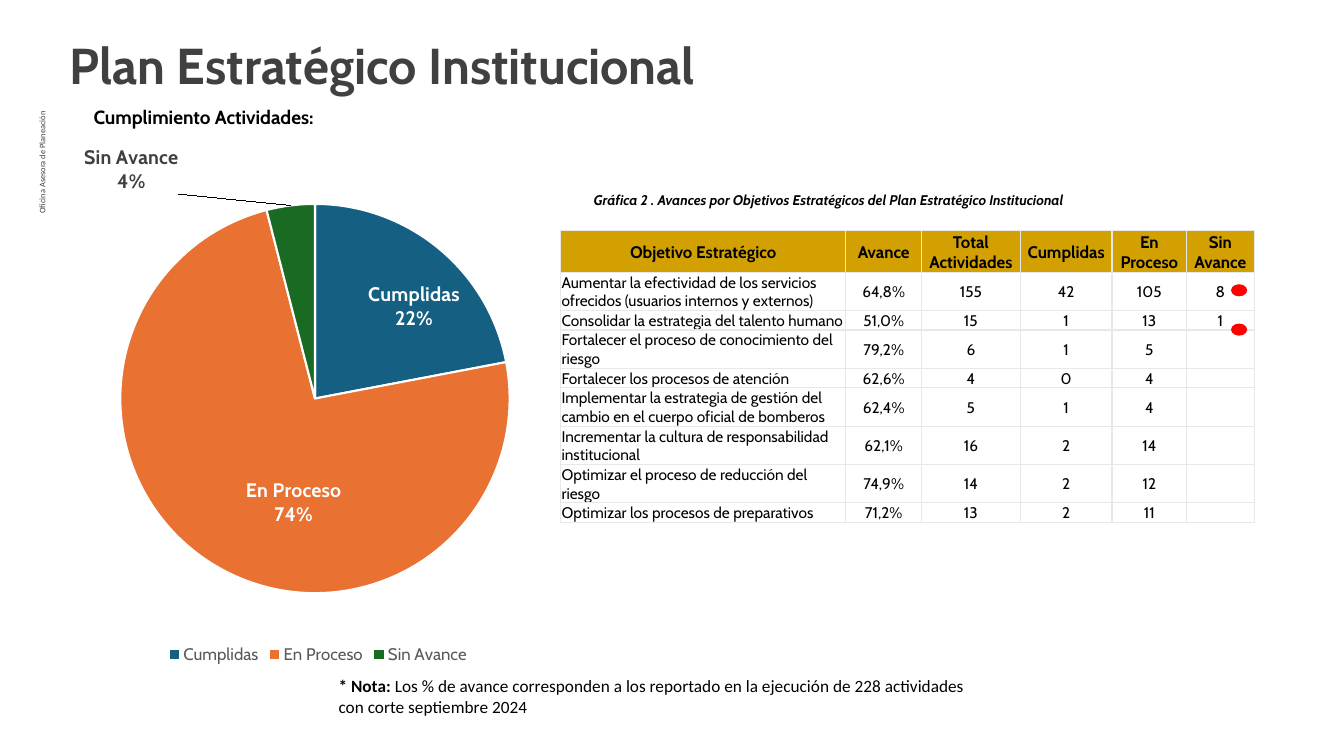
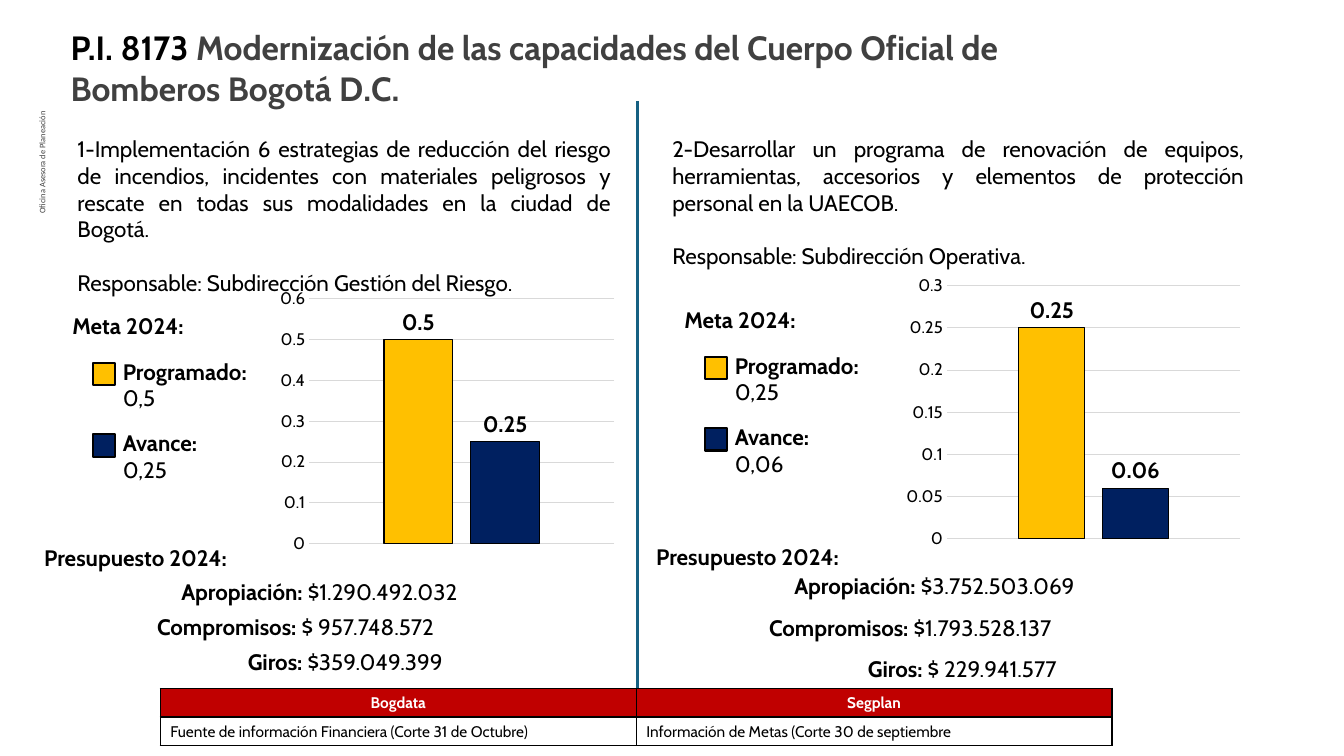
from dataclasses import dataclass

from lxml.etree import SubElement
from pptx import Presentation
from pptx.chart.data import CategoryChartData
from pptx.dml.color import RGBColor
from pptx.enum.chart import XL_CHART_TYPE as ChartType, XL_LABEL_POSITION as LabelPos
from pptx.enum.chart import XL_LEGEND_POSITION as LegendPos, XL_TICK_MARK as TickMark
from pptx.enum.shapes import MSO_CONNECTOR, MSO_SHAPE
from pptx.enum.text import MSO_ANCHOR as Anchor, MSO_AUTO_SIZE, PP_ALIGN as Align
from pptx.oxml import parse_xml
from pptx.oxml.ns import nsdecls, qn
from pptx.util import Inches, Pt

# Shared colours and fonts
BLACK = RGBColor(0x00, 0x00, 0x00)
WHITE = RGBColor(0xFF, 0xFF, 0xFF)
DARK = RGBColor(0x40, 0x40, 0x40)
GRAY = RGBColor(0x59, 0x59, 0x59)
GRID = RGBColor(0xD9, 0xD9, 0xD9)
PALE = RGBColor(0xE8, 0xE8, 0xE8)
BLUE = RGBColor(0x15, 0x60, 0x82)
ORANGE = RGBColor(0xE9, 0x71, 0x32)
GREEN = RGBColor(0x19, 0x6B, 0x24)
GOLD = RGBColor(0xD2, 0xA0, 0x00)
YELLOW = RGBColor(0xFF, 0xC0, 0x00)
NAVY = RGBColor(0x00, 0x20, 0x60)
CRIMSON = RGBColor(0xC0, 0x00, 0x00)
RED = RGBColor(0xFF, 0x00, 0x00)
MAIN_FONT, NOTE_FONT = "Cabin", "Calibri"

OBJECTIVES = [
    ("Objetivo Estratégico", "Avance", "Total\nActividades", "Cumplidas", "En Proceso", "Sin Avance"),
    ("Aumentar la efectividad de los servicios ofrecidos (usuarios internos y externos)",
     "64,8%", "155", "42", "105", "8"),
    ("Consolidar la estrategia del talento humano", "51,0%", "15", "1", "13", "1"),
    ("Fortalecer el proceso de conocimiento del riesgo", "79,2%", "6", "1", "5", ""),
    ("Fortalecer los procesos de atención", "62,6%", "4", "0", "4", ""),
    ("Implementar la estrategia de gestión del cambio en el cuerpo oficial de bomberos",
     "62,4%", "5", "1", "4", ""),
    ("Incrementar la cultura de responsabilidad institucional", "62,1%", "16", "2", "14", ""),
    ("Optimizar el proceso de reducción del riesgo", "74,9%", "14", "2", "12", ""),
    ("Optimizar los procesos de preparativos", "71,2%", "13", "2", "11", ""),
]
SOURCES = [
    ("Bogdata", "Segplan"),
    ("Fuente de información Financiera (Corte 31 de Octubre)",
     "Información de Metas (Corte 30 de septiembre"),
]


@dataclass
class Goal:
    left: float            # shift of the whole column
    top: float             # top of the "Meta 2024" block
    description_at: tuple
    description: str
    responsible: str
    planned: float
    achieved: float
    chart_at: tuple
    axis_max: float
    axis_step: float
    budget_top: float
    budget: list           # label, amount, left, top


GOALS = [
    Goal(0, 3.05, (0.67, 1.29, 5.49, 1.64),
         "1-Implementación 6 estrategias de reducción del riesgo de incendios, incidentes con "
         "materiales peligrosos y rescate en todas sus modalidades en la ciudad de Bogotá.",
         "Responsable: Subdirección Gestión del Riesgo.", 0.5, 0.25,
         (2.71, 2.81, 3.45, 2.74), 0.6, 0.1, 5.35,
         [("Apropiación:", "$1.290.492.032", 1.7, 5.69),
          ("Compromisos:", "$ 957.748.572", 1.46, 6.03),
          ("Giros:", "$359.049.399", 2.36, 6.38)]),
    Goal(6.07, 2.99, (6.57, 1.29, 5.87, 1.37),
         "2-Desarrollar un programa de renovación de equipos, herramientas, accesorios y "
         "elementos de protección personal en la UAECOB.",
         "Responsable: Subdirección Operativa.", 0.25, 0.06,
         (8.92, 2.68, 3.45, 2.82), 0.3, 0.05, 5.34,
         [("Apropiación:", "$3.752.503.069", 7.78, 5.63),
          ("Compromisos:", "$1.793.528.137", 7.53, 6.04),
          ("Giros:", "$ 229.941.577", 8.51, 6.45)]),
]


def inches(values):
    return [Inches(value) for value in values]


def set_font(font, size, color=BLACK, bold=False, name=MAIN_FONT):
    font.size, font.bold, font.name = Pt(size), bold, name
    font.color.rgb = color


def add_runs(paragraph, runs, size, name=MAIN_FONT, italic=None):
    """Each run is (text, bold, color)."""
    for text, bold, color in runs:
        run = paragraph.add_run()
        run.text = text
        set_font(run.font, size, color, bold, name)
        run.font.italic = italic


def add_text(slide, at, paragraphs, size=16, align=Align.LEFT, name=MAIN_FONT, italic=None):
    box = slide.shapes.add_textbox(*inches(at))
    frame = box.text_frame
    frame.word_wrap = True
    for index, runs in enumerate(paragraphs):
        paragraph = frame.add_paragraph() if index else frame.paragraphs[0]
        paragraph.alignment = align
        add_runs(paragraph, runs, size, name, italic)
    return box


def add_marker(slide, kind, at, fill, outline=None):
    marker = slide.shapes.add_shape(kind, *inches(at))
    marker.shadow.inherit = False
    marker.fill.solid()
    marker.fill.fore_color.rgb = fill
    if outline is None:
        marker.line.fill.background()
    else:
        marker.line.color.rgb = outline
        marker.line.width = Pt(1.5)


def add_slide(deck, title_at, title_runs, size):
    """A slide with the shared title style and the vertical office label."""
    slide = deck.slides.add_slide(deck.slide_layouts[5])
    title = slide.shapes.title
    title.left, title.top, title.width, title.height = inches(title_at)
    frame = title.text_frame
    frame.auto_size = MSO_AUTO_SIZE.NONE
    frame.vertical_anchor = Anchor.TOP
    frame.paragraphs[0].alignment = Align.LEFT
    add_runs(frame.paragraphs[0], title_runs, size)

    office = add_text(slide, (-0.88, 2.24, 2.59, 0.18),
                      [[("Oficina Asesora de Planeación", False, DARK)]], 6, Align.RIGHT, NOTE_FONT)
    office.rotation = 270
    frame = office.text_frame
    frame.margin_left = frame.margin_right = Inches(0.07)
    frame.margin_top = frame.margin_bottom = Inches(0.04)
    return slide


def set_borders(cell, color):
    properties = cell._tc.get_or_add_tcPr()
    for side in ("lnL", "lnR", "lnT", "lnB"):
        properties.append(parse_xml(
            f'<a:{side} {nsdecls("a")} w="12700"><a:solidFill>'
            f'<a:srgbClr val="{color}"/></a:solidFill></a:{side}>'))


def add_table(slide, at, rows, widths, heights, border, header_fill, header_color,
              header_size, centred_from, margins=None, anchor=Anchor.TOP):
    """Body columns from centred_from on are centred."""
    table = slide.shapes.add_table(len(rows), len(widths), *inches(at)).table
    table.horz_banding = False
    for column, width in zip(table.columns, widths):
        column.width = Inches(width)
    for r, (row, height) in enumerate(zip(rows, heights)):
        table.rows[r].height = Inches(height)
        header = r == 0
        size = header_size if header else 11
        for c, text in enumerate(row):
            cell = table.cell(r, c)
            set_borders(cell, border)
            cell.vertical_anchor = anchor
            if margins:
                (cell.margin_left, cell.margin_top,
                 cell.margin_right, cell.margin_bottom) = inches(margins)
            if header:
                cell.fill.solid()
                cell.fill.fore_color.rgb = header_fill
            else:
                cell.fill.background()
            frame = cell.text_frame
            for index, line in enumerate(text.split("\n")):
                paragraph = frame.add_paragraph() if index else frame.paragraphs[0]
                paragraph.alignment = Align.CENTER if header or c >= centred_from else Align.LEFT
                if line:
                    add_runs(paragraph, [(line, header, header_color if header else BLACK)], size)
                else:  # keeps an empty cell as low as its row
                    paragraph._p.get_or_add_endParaRPr().set("sz", str(size * 100))


def manual_layout(x, y, extra=""):
    return parse_xml(f'<c:layout {nsdecls("c")}><c:manualLayout>{extra}'
                     f'<c:x val="{x}"/><c:y val="{y}"/></c:manualLayout></c:layout>')


def add_chart(slide, kind, at, categories, series):
    data = CategoryChartData()
    data.categories = categories
    for name, values in series:
        data.add_series(name, values)
    chart = slide.shapes.add_chart(kind, *inches(at), data).chart
    chart.has_title = chart.has_legend = False
    set_font(chart.font, 10)
    return chart


def add_status_pie(slide):
    chart = add_chart(slide, ChartType.PIE, (0.09, 1.17, 6.13, 5.46),
                      ["Cumplidas", "En Proceso", "Sin Avance"], [("Series 1", (22, 74, 4))])
    chart.has_legend = True
    chart.legend.position = LegendPos.BOTTOM
    chart.legend.include_in_layout = False
    set_font(chart.legend.font, 12, GRAY)

    # Fixed plot area
    area = chart._chartSpace.chart.plotArea
    for old in area.findall(qn("c:layout")):
        area.remove(old)
    layout = manual_layout(0.18, 0.15, '<c:layoutTarget val="inner"/>'
                           '<c:xMode val="edge"/><c:yMode val="edge"/>')
    for tag, share in (("c:w", 0.63), ("c:h", 0.72)):
        SubElement(layout[0], qn(tag)).set("val", str(share))
    area.insert(0, layout)

    # Slice colours and labels: fill, text colour, anchor, shift
    slices = [(BLUE, WHITE, LabelPos.CENTER, 0.06, -0.03),
              (ORANGE, WHITE, LabelPos.CENTER, 0.05, 0.04),
              (GREEN, DARK, LabelPos.OUTSIDE_END, -0.18, -0.01)]
    series = chart.plots[0].series[0]
    for index, (fill, color, position, dx, dy) in enumerate(slices):
        point = series.points[index]
        point.format.fill.solid()
        point.format.fill.fore_color.rgb = fill
        point.format.line.color.rgb = WHITE
        point.format.line.width = Pt(1.5)
        set_font(point.data_label.font, 14, color, True)
        point.data_label.position = position
        label = point.data_label._get_or_add_dLbl()
        for tag, value in (("c:showVal", "0"), ("c:showCatName", "1"), ("c:showPercent", "1")):
            label.find(qn(tag)).set("val", value)
        label.insert(1, manual_layout(dx, dy))
        label.insert(2, parse_xml(f'<c:numFmt {nsdecls("c")} formatCode="0%" sourceLinked="0"/>'))
        SubElement(label, qn("c:separator")).text = "\n"


def add_goal_bars(slide, goal):
    chart = add_chart(slide, ChartType.COLUMN_CLUSTERED, goal.chart_at, ["1"],
                      [("Series 1", (goal.planned,)), ("Series 2", (goal.achieved,))])
    plot = chart.plots[0]
    plot.vary_by_categories = False
    plot.gap_width, plot.overlap = 219, -27
    chart.category_axis.visible = False
    axis = chart.value_axis
    axis.minimum_scale, axis.maximum_scale = 0, goal.axis_max
    axis.major_unit = goal.axis_step
    axis.major_tick_mark = axis.minor_tick_mark = TickMark.NONE
    axis.format.line.fill.background()
    axis.major_gridlines.format.line.color.rgb = GRID
    axis.major_gridlines.format.line.width = Pt(0.75)
    set_font(axis.tick_labels.font, 12)
    for series, color in zip(plot.series, (YELLOW, NAVY)):
        series.format.fill.solid()
        series.format.fill.fore_color.rgb = color
        series.format.line.color.rgb = BLACK
        series.format.line.width = Pt(0.75)
        labels = series.data_labels
        labels.show_value = True
        labels.position = LabelPos.OUTSIDE_END
        set_font(labels.font, 16, BLACK, True)


def add_goal(slide, goal):
    x, y = goal.left, goal.top
    description = add_text(slide, goal.description_at,
                           [[(goal.description, False, BLACK)], [(goal.responsible, False, BLACK)]],
                           align=Align.JUSTIFY)
    description.text_frame.paragraphs[1].line_spacing = 2.0
    add_text(slide, (x + 0.62, y, 1.87, 0.37), [[("Meta 2024:", True, BLACK)]])
    legend = [("Programado:", goal.planned, YELLOW), ("Avance:", goal.achieved, NAVY)]
    for index, (label, value, color) in enumerate(legend):
        top = y + 0.45 + 0.71 * index
        add_text(slide, (x + 1.12, top, 1.82, 0.64),
                 [[(label, True, BLACK)], [(str(value).replace(".", ","), False, BLACK)]])
        add_marker(slide, MSO_SHAPE.RECTANGLE, (x + 0.92, top + 0.1, 0.22, 0.22), color, BLACK)
    add_text(slide, (x + 0.34, goal.budget_top, 2.72, 0.37), [[("Presupuesto 2024:", True, BLACK)]])
    for label, amount, left, top in goal.budget:
        add_text(slide, (left, top, 3.73, 0.37),
                 [[(label + " ", True, BLACK), (amount, False, BLACK)]])
    add_goal_bars(slide, goal)


def build_plan_slide(deck):
    slide = add_slide(deck, (0.59, 0.29, 10.66, 0.71),
                      [("Plan Estratégico Institucional", True, DARK)], 36)
    add_text(slide, (0.83, 1, 2.66, 0.33), [[("Cumplimiento Actividades:", True, BLACK)]], 13.6)
    add_status_pie(slide)
    add_text(slide, (5.79, 1.85, 5, 0.27),
             [[("Gráfica 2 . Avances por Objetivos Estratégicos del Plan Estratégico Institucional",
                True, BLACK)]], 10, italic=True)
    heights = [0.4] + [0.38 if len(row[0]) > 43 else 0.19 for row in OBJECTIVES[1:]]
    add_table(slide, (5.56, 2.29, 6.87, 2.86), OBJECTIVES, (2.83, 0.75, 0.98, 0.91, 0.74, 0.67),
              heights, PALE, GOLD, BLACK, 12, 1, (0.01, 0.01, 0.01, 0), Anchor.MIDDLE)
    for top in (2.82, 3.21):
        add_marker(slide, MSO_SHAPE.OVAL, (12.21, top, 0.16, 0.12), RED)
    add_text(slide, (3.26, 6.65, 6.67, 0.51),
             [[("* Nota: ", True, BLACK),
               ("Los % de avance corresponden a los reportado en la ejecución de 228 actividades "
                "con corte septiembre 2024", False, BLACK)]], 12.3, name=NOTE_FONT)


def build_project_slide(deck):
    slide = add_slide(deck, (0.6, 0.22, 10.3, 0.91),
                      [("P.I. 8173 ", True, BLACK),
                       ("Modernización de las capacidades del Cuerpo Oficial de Bomberos Bogotá D.C.",
                        True, DARK)], 24)
    for goal in GOALS:
        add_goal(slide, goal)
    divider = slide.shapes.add_connector(MSO_CONNECTOR.STRAIGHT, *inches((6.32, 1, 6.32, 6.93)))
    divider.line.color.rgb = BLUE
    divider.line.width = Pt(2.25)
    SubElement(divider._element.spPr, qn("a:effectLst"))
    add_table(slide, (1.59, 6.83, 9.44, 0.56), SOURCES, (4.72, 4.72), (0.28, 0.28),
              BLACK, CRIMSON, WHITE, 11, 2)


def main():
    deck = Presentation()
    deck.slide_width, deck.slide_height = Inches(13.33), Inches(7.5)
    build_plan_slide(deck)
    build_project_slide(deck)
    deck.save("out.pptx")


if __name__ == "__main__":
    main()
